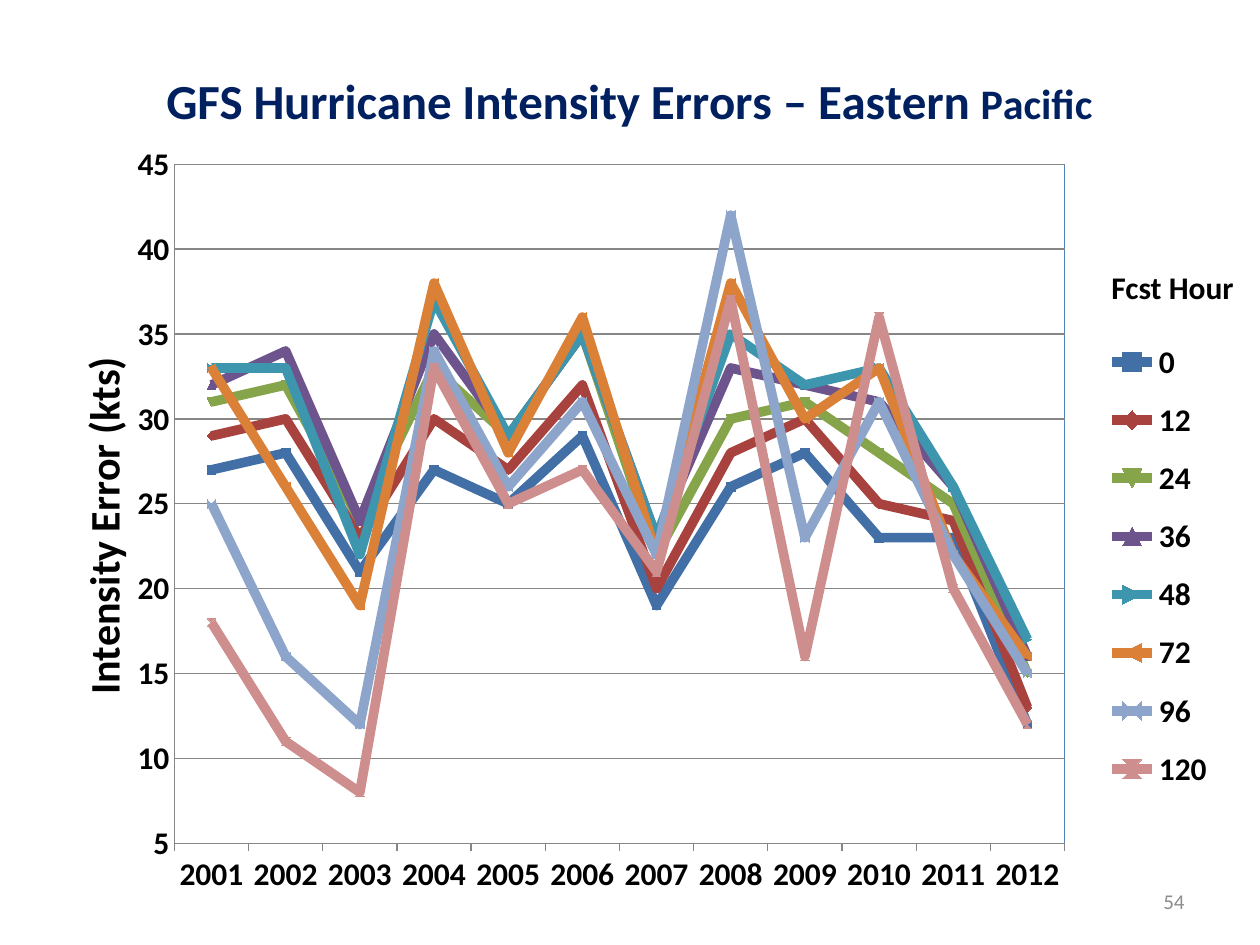
"""Build a slide with a line chart of hurricane intensity errors by year."""
from lxml import etree
from pptx import Presentation
from pptx import util as u
from pptx.chart.data import CategoryChartData
from pptx.dml.color import RGBColor
from pptx.enum import chart as ch
from pptx.enum import text as tx
from pptx.oxml import parse_xml
from pptx.oxml.ns import qn

SCALE = 914400 / 126
FACE = "Calibri"
BOX = (32, 32, 1187, 882)
COLORS = {
    "ink": "000000", "navy": "002060", "page": "8C8C8C",
    "grid": "868686", "frame": "4F81BD",
    "0": "416FA6", "12": "A8423F", "24": "86A44A", "36": "6E548D",
    "48": "3D96AE", "72": "DA8137", "96": "8EA5CB", "120": "CE8E8D",
}
YEARS = [str(year) for year in range(2001, 2013)]
ERRORS = {
    "0": (27, 28, 21, 27, 25, 29, 19, 26, 28, 23, 23, 12),
    "12": (29, 30, 23, 30, 27, 32, 20, 28, 30, 25, 24, 13),
    "24": (31, 32, 24, 33, 29, 35, 22, 30, 31, 28, 25, 15),
    "36": (32, 34, 24, 35, 29, 35, 23, 33, 32, 31, 26, 16),
    "48": (33, 33, 22, 37, 29, 35, 23, 35, 32, 33, 26, 17),
    "72": (33, 26, 19, 38, 28, 36, 22, 38, 30, 33, 22, 16),
    "96": (25, 16, 12, 34, 26, 31, 22, 42, 23, 31, 22, 15),
    "120": (18, 11, 8, 33, 25, 27, 21, 37, 16, 36, 20, 12),
}


def px(num):
    """Turn px into EMU."""
    return u.Emu(round(num * SCALE))


def paint(name):
    """Return a named colour."""
    return RGBColor.from_string(COLORS[name])


def style(font, size=18, color="ink", bold=True):
    """Format a font."""
    font.name, font.size, font.bold = FACE, u.Pt(size), bold
    font.color.rgb = paint(color)


def write(frame, words, align=None, **form):
    """Add a formatted run to the first paragraph of a text frame."""
    para = frame.paragraphs[0]
    if align is not None:
        para.alignment = align
    run = para.add_run()
    run.text = words
    style(run.font, **form)


def label(slide, box, words, anchor=tx.MSO_ANCHOR.TOP, wrap=True, **form):
    """Add a text box."""
    frame = slide.shapes.add_textbox(*map(px, box)).text_frame
    frame.word_wrap, frame.vertical_anchor = wrap, anchor
    write(frame, words, **form)


def place(node, index, **parts):
    """Give a chart part a manual layout, in fractions of the chart."""
    for old in node.findall(qn("c:layout")):
        node.remove(old)
    layout = etree.Element(qn("c:layout"))
    manual = etree.SubElement(layout, qn("c:manualLayout"))
    for key, value in parts.items():
        etree.SubElement(manual, qn(f"c:{key}")).set("val", str(value))
    node.insert(index, layout)


def edge(line, color, width=0.75):
    """Format a line."""
    line.color.rgb = paint(color)
    line.width = u.Pt(width)


def outline(plot):
    """Draw the frame of the plot area."""
    plot.append(parse_xml(
        '<c:spPr xmlns:c="http://schemas.openxmlformats.org/drawingml/2006/chart" '
        'xmlns:a="http://schemas.openxmlformats.org/drawingml/2006/main">'
        '<a:noFill/><a:ln w="9525"><a:solidFill>'
        f'<a:srgbClr val="{COLORS["frame"]}"/></a:solidFill></a:ln></c:spPr>'))


def head(title, x, y):
    """Place a chart or axis title and return its text frame."""
    place(title._element, 1, xMode="edge", yMode="edge", x=x, y=y)
    return title.text_frame


def axes(chart):
    """Format both axes."""
    years, errs = chart.category_axis, chart.value_axis
    for axis in (years, errs):
        style(axis.tick_labels.font)
        edge(axis.format.line, "grid")
    years.major_tick_mark = ch.XL_TICK_MARK.OUTSIDE
    errs.major_tick_mark = ch.XL_TICK_MARK.NONE
    errs.minimum_scale, errs.maximum_scale, errs.major_unit = 5, 45, 5
    edge(errs.major_gridlines.format.line, "grid")
    errs.has_title = True
    write(head(errs.axis_title, 0.03, 0.36), "Intensity Error (kts)", size=24)


def lines(chart):
    """Format the series."""
    for row in chart.plots[0].series:
        row.smooth = False
        edge(row.format.line, row.name, 5.5)
        row.format.line.color.rgb = paint(row.name)
        fill = row.marker.format.fill
        fill.solid()
        fill.fore_color.rgb = paint(row.name)
        row.marker.format.line.fill.background()


def graph(slide):
    """Add the line chart."""
    data = CategoryChartData()
    data.categories = YEARS
    for hour, vals in ERRORS.items():
        data.add_series(hour, vals)
    kind = ch.XL_CHART_TYPE.LINE_MARKERS
    chart = slide.shapes.add_chart(kind, *map(px, BOX), data).chart
    style(chart.font)
    chart.plots[0].vary_by_categories = False
    chart.has_title = True
    frame = head(chart.chart_title, 0.11, 0.04)
    write(frame, "GFS Hurricane Intensity Errors – Eastern ", size=28, color="navy")
    write(frame, "Pacific", size=24, color="navy")
    axes(chart)
    lines(chart)
    chart.has_legend = True
    legend = chart.legend
    legend.position = ch.XL_LEGEND_POSITION.RIGHT
    legend.include_in_layout = False
    style(legend.font)
    place(legend._element, 1, xMode="edge", yMode="edge",
          x=0.9, y=0.33, w=0.1, h=0.55)
    plot = chart._chartSpace.find(qn("c:chart")).find(qn("c:plotArea"))
    place(plot, 0, layoutTarget="inner", xMode="edge", yMode="edge",
          x=0.12, y=0.15, w=0.75, h=0.77)
    outline(plot)


def main():
    """Build and save the slide."""
    deck = Presentation()
    deck.slide_width, deck.slide_height = px(1260), px(945)
    slide = deck.slides.add_slide(deck.slide_layouts[6])
    graph(slide)
    label(slide, (1099, 262, 149, 50), "Fcst Hour", wrap=False)
    label(slide, (903, 876, 294, 50), "54", anchor=tx.MSO_ANCHOR.MIDDLE,
          align=tx.PP_ALIGN.RIGHT, size=12, color="page", bold=False)
    deck.save("out.pptx")


if __name__ == "__main__":
    main()
